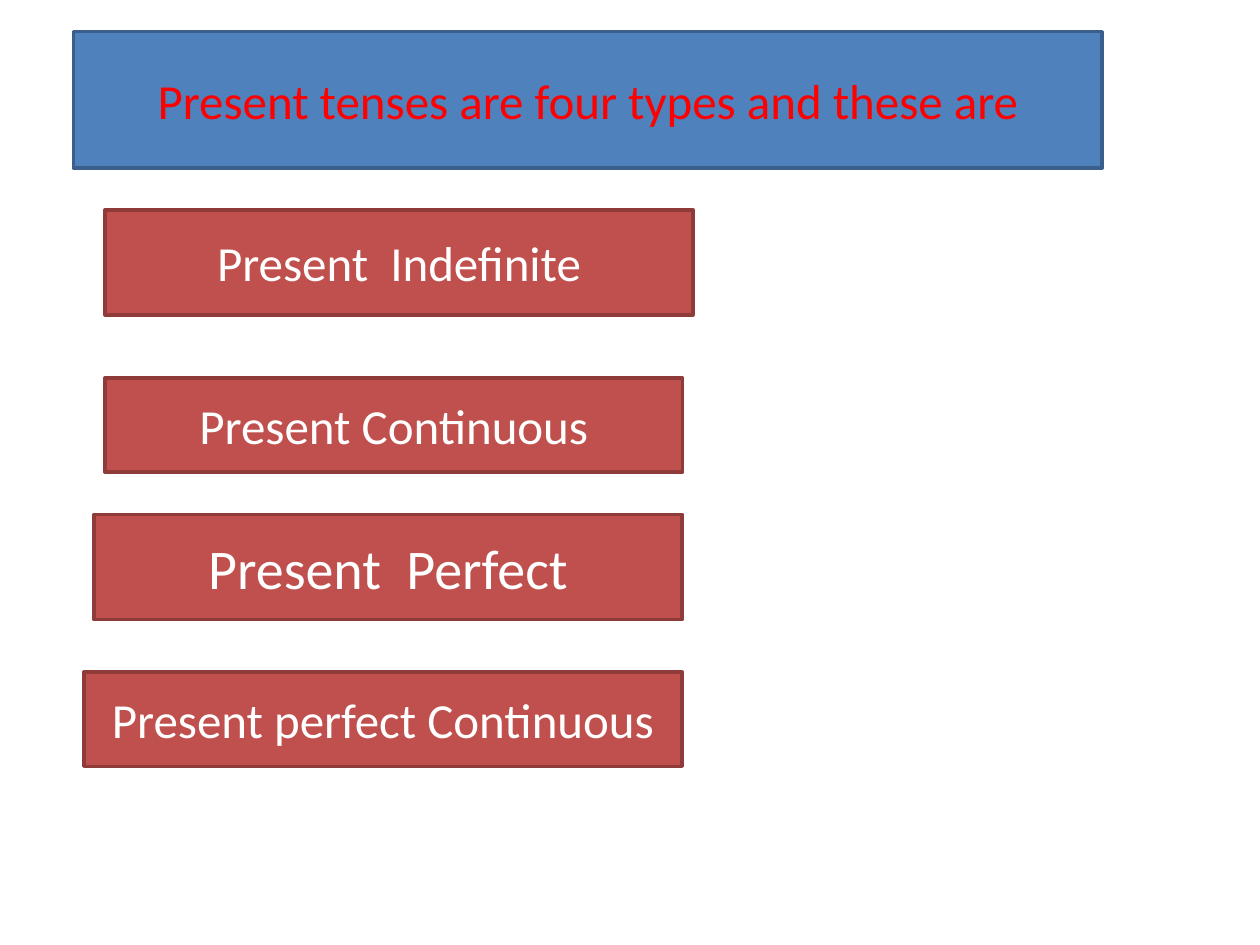
from pptx import Presentation
from pptx.dml.color import RGBColor
from pptx.enum.shapes import MSO_SHAPE
from pptx.enum.text import MSO_ANCHOR, PP_ALIGN
from pptx.util import Cm, Pt


def paint(color, code):
    color.rgb = RGBColor.from_string(code)


deck = Presentation()
deck.slide_width, deck.slide_height = Cm(25.4), Cm(19.05)
slide = deck.slides.add_slide(deck.slide_layouts[6])

BLUE = ("4F81BD", "3A5F8C", "FF0000")  # fill, line, text
RED = ("C0504D", "8E3B39", "FFFFFF")

# text, left, top, width, height (cm), text size, colours
boxes = [
    ("Present tenses are four types and these are", 1.48, 0.64, 20.74, 2.75, 28, BLUE),
    ("Present  Indefinite", 2.12, 4.23, 11.85, 2.12, 28, RED),
    ("Present Continuous", 2.12, 7.62, 11.64, 1.9, 28, RED),
    ("Present  Perfect", 1.9, 10.37, 11.85, 2.12, 32, RED),
    ("Present perfect Continuous", 1.69, 13.55, 12.06, 1.9, 28, RED),
]

for text, left, top, width, height, size, (fill, line, ink) in boxes:
    box = slide.shapes.add_shape(
        MSO_SHAPE.RECTANGLE, Cm(left), Cm(top), Cm(width), Cm(height)
    )
    box.shadow.inherit = False
    box.fill.solid()
    paint(box.fill.fore_color, fill)
    paint(box.line.color, line)
    box.line.width = Pt(2)

    frame = box.text_frame
    frame.text = text
    frame.word_wrap = True
    frame.vertical_anchor = MSO_ANCHOR.MIDDLE
    line_one = frame.paragraphs[0]
    line_one.alignment = PP_ALIGN.CENTER
    font = line_one.runs[0].font
    font.name = "Calibri"
    font.size = Pt(size)
    paint(font.color, ink)

deck.save("out.pptx")
